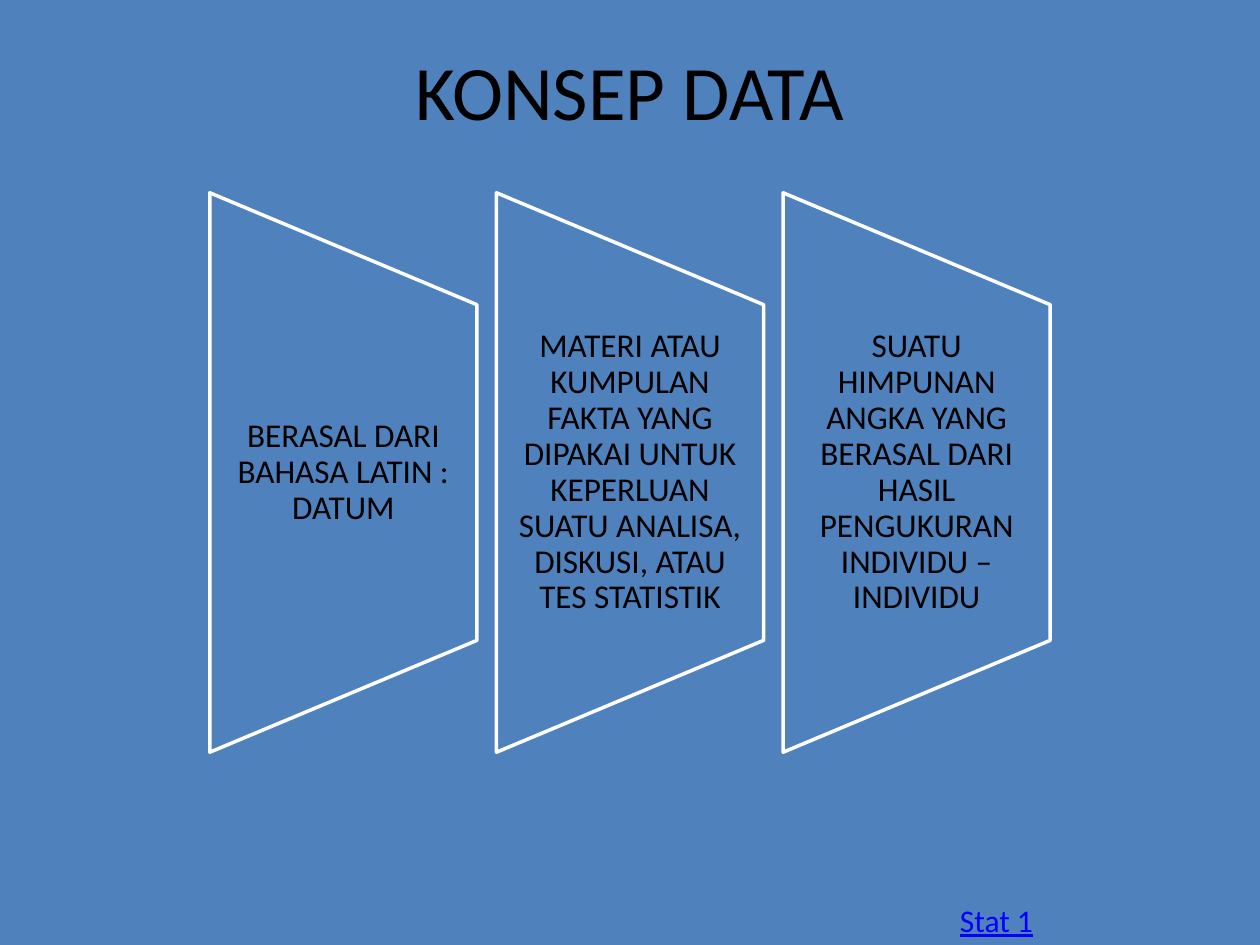
from pptx import Presentation
from pptx.dml.color import RGBColor
from pptx.enum.shapes import MSO_SHAPE
from pptx.enum.text import MSO_ANCHOR, PP_ALIGN
from pptx.util import Inches, Pt

BLUE = "4F81BD"


def color(value):
    return RGBColor.from_string(value)


def add_text(text, left, top, width, height, *, size, fill="000000",
             align=PP_ALIGN.CENTER, anchor=MSO_ANCHOR.TOP, margin_x=0.1,
             margin_y=0.05, line_spacing=1.0, underline=False, wrap=True):
    """Add a one-paragraph text box; lengths are inches and size is points."""
    box = slide.shapes.add_textbox(
        Inches(left), Inches(top), Inches(width), Inches(height))
    frame = box.text_frame
    frame.word_wrap = wrap
    frame.vertical_anchor = anchor
    frame.margin_left = frame.margin_right = Inches(margin_x)
    frame.margin_top = frame.margin_bottom = Inches(margin_y)
    paragraph = frame.paragraphs[0]
    paragraph.alignment = align
    paragraph.line_spacing = line_spacing
    run = paragraph.add_run()
    run.text = text
    run.font.name = "Calibri"
    run.font.size = Pt(size)
    run.font.underline = underline
    run.font.color.rgb = color(fill)


presentation = Presentation()
presentation.slide_width = Inches(10)
presentation.slide_height = Inches(7.5)
slide = presentation.slides.add_slide(presentation.slide_layouts[6])
slide.background.fill.solid()
slide.background.fill.fore_color.rgb = color(BLUE)

add_text("Stat 1", 7.52, 7.1, 0.79, 0.4, size=18, fill="0000FF",
         align=PP_ALIGN.LEFT, underline=True, wrap=False)
add_text("KONSEP DATA", 0.5, 0.3, 9, 1.25, size=44)

definitions = [
    "BERASAL DARI BAHASA LATIN : DATUM",
    "MATERI ATAU KUMPULAN FAKTA YANG DIPAKAI UNTUK KEPERLUAN SUATU ANALISA, "
    "DISKUSI, ATAU TES STATISTIK",
    "SUATU HIMPUNAN ANGKA YANG BERASAL DARI HASIL PENGUKURAN INDIVIDU – INDIVIDU",
]
panel_width, panel_height, text_height = 2.12, 4.44, 2.67
pitch = 2.275
center_y = 3.75

for index, definition in enumerate(definitions):
    center_x = 5 + (index - 1) * pitch
    # The panel is turned a quarter, so its width and height change places.
    panel = slide.shapes.add_shape(
        MSO_SHAPE.FLOWCHART_MANUAL_OPERATION,
        Inches(center_x - panel_height / 2), Inches(center_y - panel_width / 2),
        Inches(panel_height), Inches(panel_width))
    panel.rotation = 270
    panel.shadow.inherit = False
    panel.fill.solid()
    panel.fill.fore_color.rgb = color(BLUE)
    panel.line.color.rgb = color("FFFFFF")
    panel.line.width = Pt(2)
    add_text(definition, center_x - panel_width / 2, center_y - text_height / 2,
             panel_width, text_height, size=19, anchor=MSO_ANCHOR.MIDDLE,
             margin_x=0.13, margin_y=0, line_spacing=0.9)

presentation.save("out.pptx")
